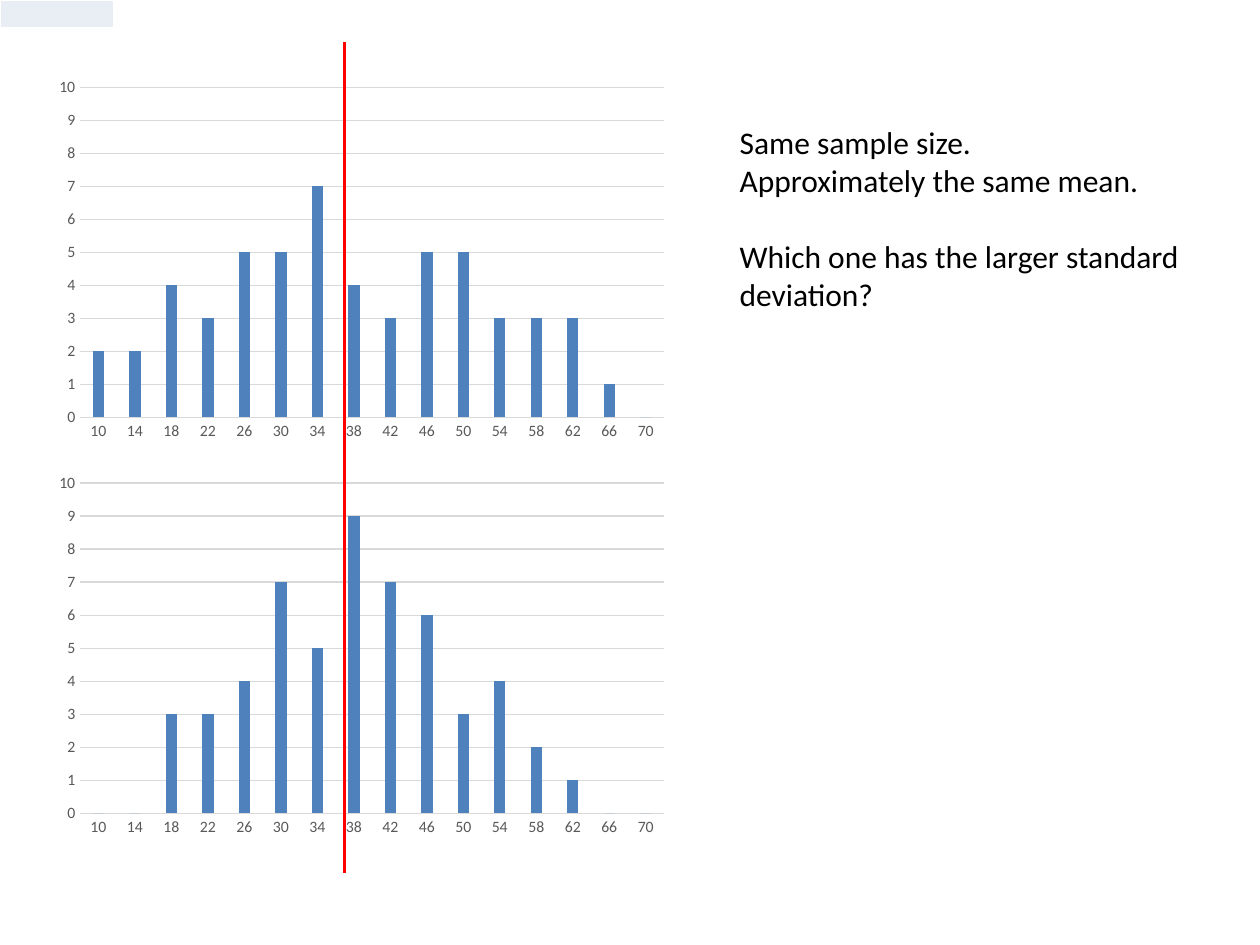
from dataclasses import dataclass
from typing import Any

from lxml.etree import SubElement
from pptx import Presentation
from pptx.chart.data import CategoryChartData as ChartData
from pptx.dml.color import RGBColor as RGB
from pptx.enum.chart import XL_CHART_TYPE as ChartType, XL_TICK_MARK as Tick
from pptx.enum.shapes import MSO_CONNECTOR as Connector
from pptx.enum.text import MSO_AUTO_SIZE as AutoSize
from pptx.oxml.ns import qn
from pptx.util import Cm, Pt

COLORS = {
    "text": "000000",
    "label": "595959",
    "grid": "D9D9D9",
    "bar": "4F81BD",
    "mean": "FF0000",
    "cell": "E9EDF4",
    "border": "FFFFFF",
}
BINS = [str(n) for n in range(10, 71, 4)]
WIDE = [2, 2, 4, 3, 5, 5, 7, 4, 3, 5, 5, 3, 3, 3, 1, 0]
NARROW = [0, 0, 3, 3, 4, 7, 5, 9, 7, 6, 3, 4, 2, 1, 0, 0]


@dataclass
class SlideBuilder:
    """Holds the slide and its style, and draws each kind of element."""

    slide: Any
    font: str = "Calibri"

    def color(self, name):
        return RGB.from_string(COLORS[name])

    def set_font(self, font, size, color):
        font.name = self.font
        font.size = Pt(size)
        font.color.rgb = self.color(color)

    def set_line(self, line, color, width):
        line.color.rgb = self.color(color)
        line.width = Pt(width)

    def histogram(self, left, top, width, height, values):
        data = ChartData()
        data.categories = BINS
        data.add_series("Series 1", values)
        chart = self.slide.shapes.add_chart(
            ChartType.COLUMN_CLUSTERED, Cm(left), Cm(top), Cm(width), Cm(height), data
        ).chart
        chart.has_legend = False
        chart.has_title = False
        self.set_font(chart.font, 10, "text")

        plot = chart.plots[0]
        plot.gap_width = 219
        plot.overlap = -27
        plot.vary_by_categories = False
        fill = plot.series[0].format.fill
        fill.solid()
        fill.fore_color.rgb = self.color("bar")

        for axis in (chart.category_axis, chart.value_axis):
            axis.major_tick_mark = axis.minor_tick_mark = Tick.NONE
            self.set_font(axis.tick_labels.font, 9, "label")
        self.set_line(chart.category_axis.format.line, "grid", 0.75)
        value_axis = chart.value_axis
        value_axis.minimum_scale, value_axis.maximum_scale = 0, 10
        value_axis.major_unit = 1
        value_axis.format.line.fill.background()
        self.set_line(value_axis.major_gridlines.format.line, "grid", 0.75)

    def table_cell(self, left, top, width, height):
        table = self.slide.shapes.add_table(
            1, 1, Cm(left), Cm(top), Cm(width), Cm(height)
        ).table
        table.first_row = table.horz_banding = False
        cell = table.cell(0, 0)
        cell.margin_left = cell.margin_right = cell.margin_top = cell.margin_bottom = 0
        p = cell.text_frame.paragraphs[0]
        SubElement(p._p, qn("a:endParaRPr")).set("sz", "800")
        props = cell._tc.get_or_add_tcPr()
        for side in ("lnL", "lnR", "lnT", "lnB"):
            border = SubElement(props, qn(f"a:{side}"), w=str(Pt(1)))
            solid = SubElement(border, qn("a:solidFill"))
            SubElement(solid, qn("a:srgbClr"), val=COLORS["border"])
        cell.fill.solid()
        cell.fill.fore_color.rgb = self.color("cell")

    def vertical_line(self, x, top, bottom):
        line = self.slide.shapes.add_connector(
            Connector.STRAIGHT, Cm(x), Cm(top), Cm(x), Cm(bottom)
        )
        self.set_line(line.line, "mean", 1.5)
        SubElement(line._element.spPr, qn("a:effectLst"))

    def text(self, left, top, width, height, paragraphs):
        sp = self.slide.shapes.add_textbox(Cm(left), Cm(top), Cm(width), Cm(height))
        tf = sp.text_frame
        tf.word_wrap = True
        tf.auto_size = AutoSize.SHAPE_TO_FIT_TEXT
        for i, (content, space) in enumerate(paragraphs):
            p = tf.add_paragraph() if i else tf.paragraphs[0]
            p.text = content
            p.space_before = Pt(space)
            self.set_font(p.font, 18, "text")


def main():
    prs = Presentation()
    prs.slide_width, prs.slide_height = Cm(25.4), Cm(19.05)
    s = SlideBuilder(prs.slides.add_slide(prs.slide_layouts[6]))
    s.histogram(0.94, 1.42, 12.7, 7.62, WIDE)
    s.table_cell(0, 0, 2.29, 0.55)
    s.histogram(0.94, 9.4, 12.7, 7.62, NARROW)
    s.vertical_line(6.94, 0.85, 17.6)
    s.text(14.66, 2.36, 9.52, 4.11, [
        ("Same sample size.", 0),
        ("Approximately the same mean.", 0),
        ("Which one has the larger standard deviation?", 22),
    ])
    prs.save("out.pptx")


if __name__ == "__main__":
    main()
